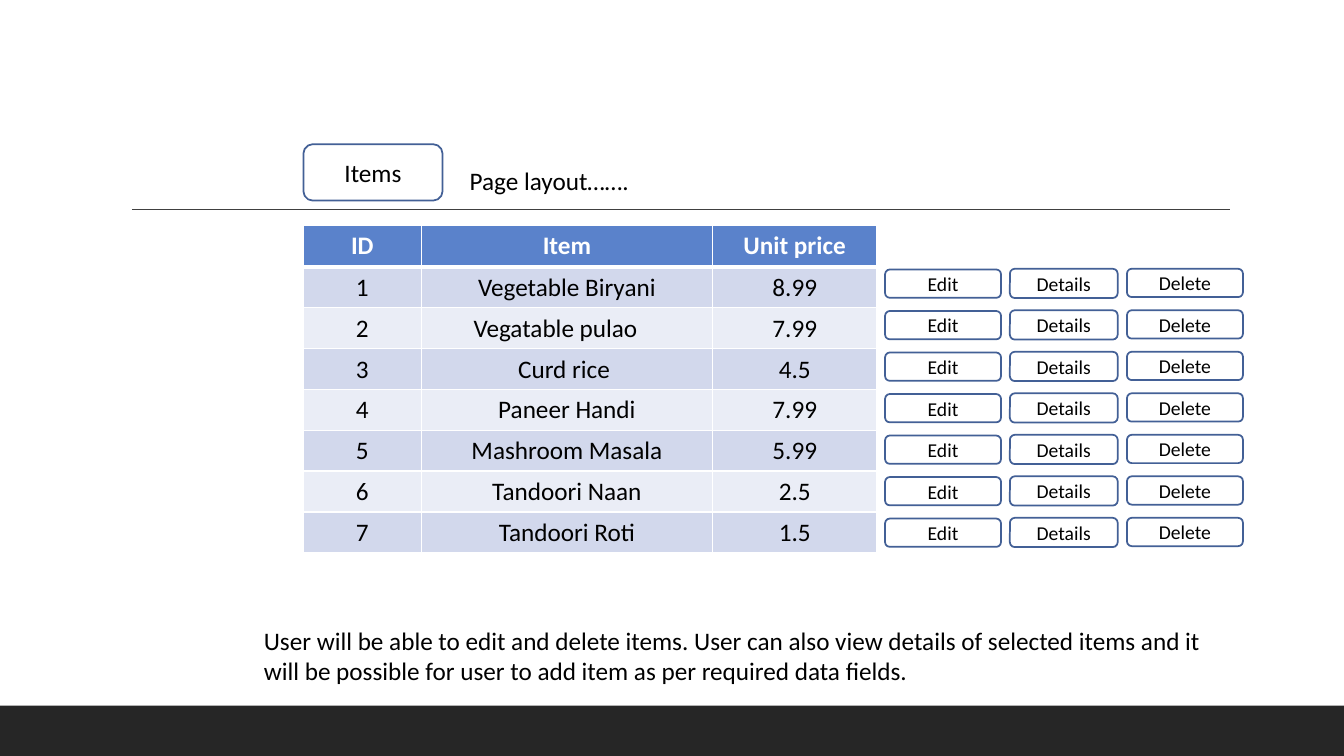
"""Build the item administration page layout slide."""
import dataclasses

import lxml.etree
import pptx
import pptx.dml.color
import pptx.enum.shapes
import pptx.enum.text
import pptx.oxml.ns
import pptx.util

Pt = pptx.util.Pt
Align = pptx.enum.text.PP_ALIGN
Anchor = pptx.enum.text.MSO_ANCHOR


@dataclasses.dataclass(frozen=True)
class Theme:
    font: str = "Calibri"
    text_size: float = 18
    button_size: float = 14
    text: str = "000000"
    white: str = "FFFFFF"
    header: str = "5A82CB"
    bands: tuple = ("D2D8EC", "EAEDF6")
    outline: str = "436096"
    rule: str = "404040"
    footer: str = "262626"


def rgb(value):
    return pptx.dml.color.RGBColor.from_string(value)


def write_text(frame, text, *, font, size, color, bold=False, align=Align.LEFT,
               anchor=Anchor.TOP, wrap=True, margins=(7.2, 3.6, 7.2, 3.6)):
    frame.text = text
    frame.word_wrap = wrap
    frame.vertical_anchor = anchor
    sides = ("margin_left", "margin_top", "margin_right", "margin_bottom")
    for side, margin in zip(sides, margins):
        setattr(frame, side, Pt(margin))
    paragraph = frame.paragraphs[0]
    paragraph.alignment = align
    paragraph.font.name = font
    paragraph.font.size = Pt(size)
    paragraph.font.bold = bold
    paragraph.font.color.rgb = rgb(color)


class SlideBuilder:
    def __init__(self, slide, theme):
        self.slide = slide
        self.theme = theme

    def text(self, frame, text, **options):
        defaults = dict(font=self.theme.font, size=self.theme.text_size,
                        color=self.theme.text)
        write_text(frame, text, **(defaults | options))

    def title(self, text, left, top, width, height):
        title = self.slide.shapes.title
        title.left, title.top = Pt(left), Pt(top)
        title.width, title.height = Pt(width), Pt(height)
        self.text(title.text_frame, text, wrap=False)
        title.text_frame.auto_size = pptx.enum.text.MSO_AUTO_SIZE.NONE

    def note(self, text, left, top, width, height):
        box = self.slide.shapes.add_textbox(Pt(left), Pt(top), Pt(width), Pt(height))
        self.text(box.text_frame, text)

    def bar(self, left, top, width, height):
        shape = self.slide.shapes.add_shape(
            pptx.enum.shapes.MSO_SHAPE.RECTANGLE, Pt(left), Pt(top), Pt(width), Pt(height))
        shape.shadow.inherit = False
        shape.fill.solid()
        shape.fill.fore_color.rgb = rgb(self.theme.footer)
        shape.line.fill.background()

    def rule(self, left, top, right):
        connector = self.slide.shapes.add_connector(
            pptx.enum.shapes.MSO_CONNECTOR.STRAIGHT, Pt(left), Pt(top), Pt(right), Pt(top))
        connector.line.color.rgb = rgb(self.theme.rule)
        connector.line.width = Pt(1)
        properties = connector._element.spPr
        lxml.etree.SubElement(properties, pptx.oxml.ns.qn("a:effectLst"))

    def button(self, text, left, top, width, height, size):
        shape = self.slide.shapes.add_shape(
            pptx.enum.shapes.MSO_SHAPE.ROUNDED_RECTANGLE,
            Pt(left), Pt(top), Pt(width), Pt(height))
        shape.shadow.inherit = False
        shape.fill.solid()
        shape.fill.fore_color.rgb = rgb(self.theme.white)
        shape.line.color.rgb = rgb(self.theme.outline)
        shape.line.width = Pt(1.25)
        self.text(shape.text_frame, text, size=size, align=Align.CENTER,
                  anchor=Anchor.MIDDLE, margins=(7.2, 0, 7.2, 0))

    def borders(self, cell, top, bottom):
        properties = cell._tc.get_or_add_tcPr()
        widths = {"lnL": 1, "lnR": 1, "lnT": top, "lnB": bottom}
        for index, (name, width) in enumerate(widths.items()):
            line = lxml.etree.Element(pptx.oxml.ns.qn(f"a:{name}"), w=str(Pt(width)))
            fill = lxml.etree.SubElement(line, pptx.oxml.ns.qn("a:solidFill"))
            lxml.etree.SubElement(fill, pptx.oxml.ns.qn("a:srgbClr"), val=self.theme.white)
            properties.insert(index, line)

    def table(self, rows, left, top, column_widths, row_height, right_margins):
        table = self.slide.shapes.add_table(
            len(rows), len(column_widths), Pt(left), Pt(top),
            Pt(sum(column_widths)), Pt(row_height * len(rows))).table
        for column, width in zip(table.columns, column_widths):
            column.width = Pt(width)
        for row_index, values in enumerate(rows):
            table.rows[row_index].height = Pt(row_height)
            is_header = row_index == 0
            fill = self.theme.header if is_header else self.theme.bands[(row_index - 1) % 2]
            for column_index, value in enumerate(values):
                cell = table.cell(row_index, column_index)
                cell.fill.solid()
                cell.fill.fore_color.rgb = rgb(fill)
                self.borders(cell, 3 if row_index == 1 else 1, 3 if is_header else 1)
                if is_header:
                    options = dict(color=self.theme.white, bold=True)
                    margins = (7.2, 3.6, 7.2, 3.6)
                else:
                    options = {}
                    margins = (0.7, 0.7, right_margins.get(value, 0.7), 0)
                self.cell_text(cell, value, margins, **options)

    def cell_text(self, cell, text, margins, **options):
        self.text(cell.text_frame, text, align=Align.CENTER, **options)
        cell.vertical_anchor = Anchor.MIDDLE
        cell.margin_left, cell.margin_top, cell.margin_right, cell.margin_bottom = map(Pt, margins)
        body = cell.text_frame._txBody.bodyPr
        body.attrib.clear()


ITEMS = [
    ("ID", "Item", "Unit price"),
    ("1", "Vegetable Biryani", "8.99"),
    ("2", "Vegatable pulao", "7.99"),
    ("3", "Curd rice", "4.5"),
    ("4", "Paneer Handi", "7.99"),
    ("5", "Mashroom Masala", "5.99"),
    ("6", "Tandoori Naan", "2.5"),
    ("7", "Tandoori Roti", "1.5"),
]
ACTIONS = [
    ("Edit", 632.2, 192.5, 82.8, 20.2),
    ("Details", 721.4, 192, 77, 20.9),
    ("Delete", 805, 192, 82.8, 20.2),
]
ACTION_PITCH = 29.65


def main():
    presentation = pptx.Presentation()
    presentation.slide_width, presentation.slide_height = Pt(960), Pt(540)
    slide = presentation.slides.add_slide(presentation.slide_layouts[5])
    theme = Theme()
    builder = SlideBuilder(slide, theme)
    builder.bar(0, 504, 960, 36)
    builder.rule(94.3, 149.5, 878.8)
    builder.table(ITEMS, 216.7, 161.3, (84.2, 208.1, 117.4), 29.2,
                  {"Vegatable pulao": 17, "Curd rice": 4.8})
    builder.button("Items", 216.7, 103, 99.4, 40.3, theme.text_size)
    for row in range(len(ITEMS) - 1):
        for label, left, top, width, height in ACTIONS:
            builder.button(label, left, top + row * ACTION_PITCH, width, height,
                           theme.button_size)
    builder.title("Page layout…….", 328.3, 114.5, 128.9, 29.1)
    builder.note("User will be able to edit and delete items. User can also view details of "
                 "selected items and it will be possible for user to add item as per required "
                 "data fields.", 181.4, 442.8, 705.6, 50.9)
    presentation.save("out.pptx")


if __name__ == "__main__":
    main()
